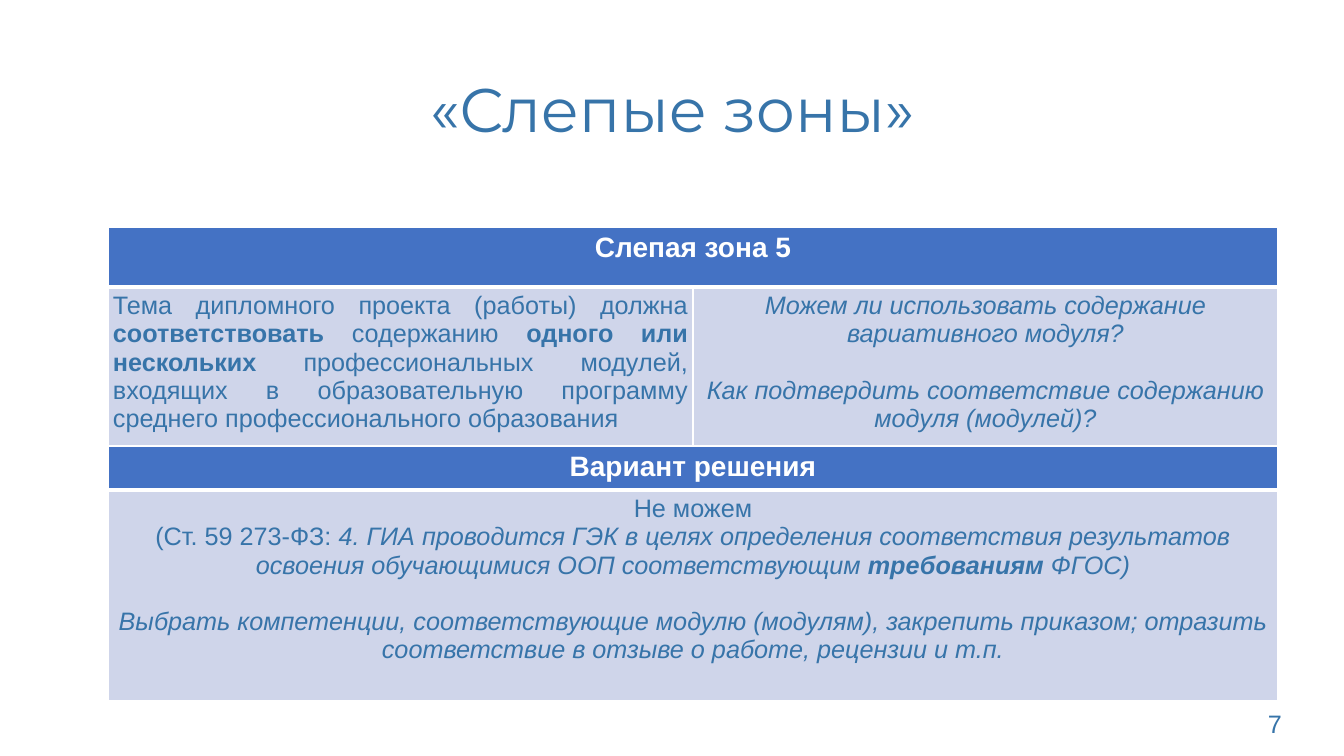
"""Build the «Слепые зоны» slide with its two stacked tables."""
from dataclasses import dataclass

from lxml import etree
from pptx import Presentation
from pptx import util as u
from pptx.dml import color
from pptx.enum import text
from pptx.oxml import ns

SCALE = 914400 / 100.8
BLUE, HEADER, PALE, WHITE = "3774A9", "4472C4", "CFD5EA", "FFFFFF"
LEFT, WIDTH = 108, 1170
CENTER, JUSTIFY = text.PP_ALIGN.CENTER, text.PP_ALIGN.JUSTIFY


@dataclass
class Span:
    """A run of text and its format."""
    words: str
    bold: bool = False
    italic: bool = False
    size: int = 18
    ink: str = BLUE
    face: str = "Arial"


@dataclass
class Para:
    """A paragraph of spans."""
    spans: list[Span]
    align: text.PP_ALIGN = CENTER
    format: dict[str, float] | None = None


@dataclass
class Cell:
    """A table cell."""
    paras: list[Para]
    fill: str = PALE


@dataclass
class Grid:
    """A table whose first row is a header across all columns."""
    top: int
    heights: list[int]
    header: str
    body: list[Cell]
    inset: int


@dataclass
class Label:
    """A text box."""
    box: tuple[int, int, int, int]
    para: Para
    anchor: text.MSO_ANCHOR


def px(length: float) -> int:
    """Turn pixels into EMU."""
    return u.Emu(round(length * SCALE))


def rgb(code: str) -> color.RGBColor:
    """Turn a hex string into a colour."""
    return color.RGBColor.from_string(code)


def write(frame, paras: list[Para]) -> None:
    """Fill a text frame with paragraphs."""
    for index, para in enumerate(paras):
        target = frame.add_paragraph() if index else frame.paragraphs[0]
        target.alignment = para.align
        for name, value in (para.format or {}).items():
            setattr(target, name, value)
        for span in para.spans:
            run = target.add_run()
            run.text = span.words
            run.font.color.rgb = rgb(span.ink)
            style = {"name": span.face, "size": u.Pt(span.size),
                     "bold": span.bold, "italic": span.italic}
            for name, value in style.items():
                setattr(run.font, name, value)


def add_border(cell, side: str, points: int) -> None:
    """Draw one white cell border."""
    line = etree.SubElement(cell._tc.get_or_add_tcPr(), ns.qn(f"a:ln{side}"), w=str(u.Pt(points)))
    solid = etree.SubElement(line, ns.qn("a:solidFill"))
    etree.SubElement(solid, ns.qn("a:srgbClr"), val=WHITE)


def draw_cell(cell, content: Cell, inset: int, edges: dict[str, int]) -> None:
    """Format and fill one table cell."""
    for side, points in edges.items():
        add_border(cell, side, points)
    cell.fill.solid()
    cell.fill.fore_color.rgb = rgb(content.fill)
    margins = {"margin_left": px(inset), "margin_right": px(inset),
               "margin_top": px(5), "margin_bottom": px(5)}
    for name, value in margins.items():
        setattr(cell, name, value)
    write(cell.text_frame, content.paras)


def draw_grid(page, grid: Grid) -> None:
    """Draw a table with its header and body row."""
    count = len(grid.body)
    table = page.shapes.add_table(2, count, px(LEFT), px(grid.top),
                                  px(WIDTH), px(sum(grid.heights))).table
    table.horz_banding = False
    for row, height in zip(table.rows, grid.heights):
        row.height = px(height)
    for column in table.columns:
        column.width = px(WIDTH / count)
    if count > 1:
        table.cell(0, 0).merge(table.cell(0, count - 1))
    title = Cell([Para([Span(grid.header, bold=True, size=20, ink=WHITE)])], HEADER)
    draw_cell(table.cell(0, 0), title, grid.inset, {"L": 1, "R": 1, "T": 1, "B": 3})
    for index, content in enumerate(grid.body):
        draw_cell(table.cell(1, index), content, grid.inset, {"L": 1, "R": 1, "T": 3, "B": 1})


def draw_label(page, label: Label) -> None:
    """Draw a text box."""
    frame = page.shapes.add_textbox(*map(px, label.box)).text_frame
    frame.word_wrap = True
    frame.vertical_anchor = label.anchor
    write(frame, [label.para])


GAP = {"space_before": u.Pt(20)}
LABELS = [
    Label((1258, 703, 70, 40), Para([Span("7")], text.PP_ALIGN.LEFT), text.MSO_ANCHOR.TOP),
    Label((93, 40, 1159, 146),
          Para([Span("«Слепые зоны»", size=44, face="Montserrat")], format={"line_spacing": 0.9}),
          text.MSO_ANCHOR.MIDDLE),
]
GRIDS = [
    Grid(227, [60, 150], "Слепая зона 5", [
        Cell([Para([
            Span("Тема дипломного проекта (работы) должна "),
            Span("соответствовать", bold=True),
            Span(" содержанию "),
            Span("одного или нескольких", bold=True),
            Span(" профессиональных модулей, входящих в образовательную программу "
                 "среднего профессионального образования"),
        ], JUSTIFY)]),
        Cell([
            Para([Span("Можем ли использовать содержание вариативного модуля?", italic=True)]),
            Para([Span("Как подтвердить соответствие содержанию модуля (модулей)?",
                       italic=True)], format=GAP),
        ]),
    ], 5),
    Grid(446, [44, 211], "Вариант решения", [
        Cell([
            Para([Span("Не можем")]),
            Para([
                Span("(Ст. 59 273-ФЗ: "),
                Span("4. ГИА проводится ГЭК в целях определения соответствия результатов "
                     "освоения обучающимися ООП соответствующим ", italic=True),
                Span("требованиям", bold=True, italic=True),
                Span(" ФГОС)", italic=True),
            ]),
            Para([Span("Выбрать компетенции, соответствующие модулю (модулям), закрепить "
                       "приказом; отразить соответствие в отзыве о работе, рецензии и т.п.",
                       italic=True)], format=GAP),
        ]),
    ], 10),
]


def main() -> None:
    """Build and save the deck."""
    deck = Presentation()
    deck.slide_width, deck.slide_height = px(1344), px(756)
    page = deck.slides.add_slide(deck.slide_layouts[6])
    for label in LABELS:
        draw_label(page, label)
    for grid in GRIDS:
        draw_grid(page, grid)
    deck.save("out.pptx")


if __name__ == "__main__":
    main()
